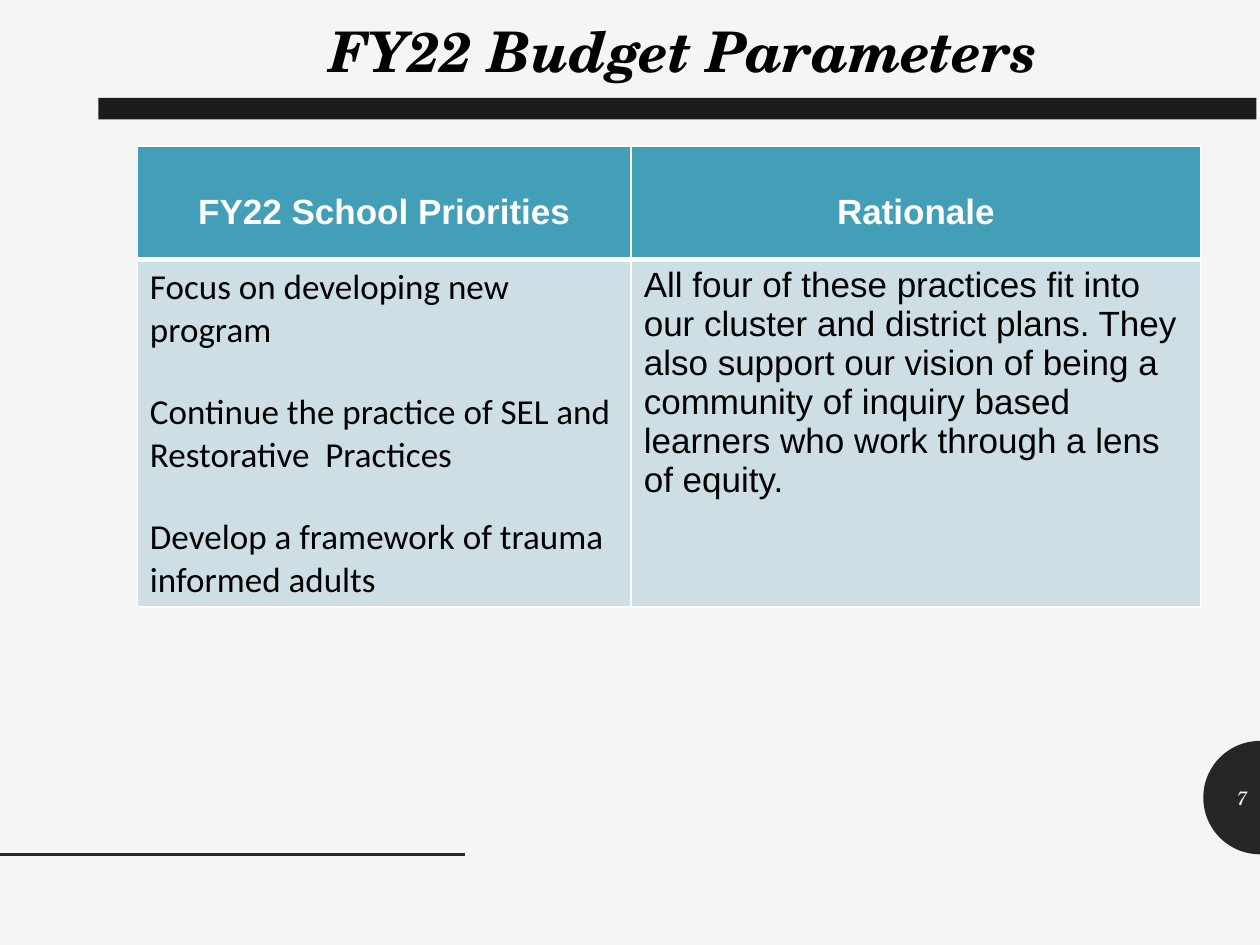
import math

from lxml import etree
from pptx import Presentation
from pptx.dml.color import RGBColor
from pptx.enum.shapes import MSO_CONNECTOR, MSO_SHAPE
from pptx.enum.text import MSO_ANCHOR, PP_ALIGN
from pptx.oxml.ns import qn
from pptx.util import Pt

CENTER, LEFT, RIGHT = PP_ALIGN.CENTER, PP_ALIGN.LEFT, PP_ALIGN.RIGHT
MIDDLE = MSO_ANCHOR.MIDDLE
RECTANGLE = MSO_SHAPE.RECTANGLE
STRAIGHT = MSO_CONNECTOR.STRAIGHT

PAPER = RGBColor(0xF5, 0xF5, 0xF5)
CHARCOAL = RGBColor(0x26, 0x26, 0x26)
BAR = RGBColor(0x1D, 0x1A, 0x1D)
BLACK = RGBColor(0, 0, 0)
WHITE = RGBColor(0xFF, 0xFF, 0xFF)
TEAL = RGBColor(0x43, 0x9E, 0xB7)
PALE_TEAL = RGBColor(0xCD, 0xDE, 0xE5)

SERIF = "TeX Gyre Schola"
TITLE_FORMAT = {"name": SERIF, "size": Pt(32), "bold": True, "italic": True}
NUMBER_FORMAT = {"name": SERIF, "size": Pt(11), "italic": True}
HEADER_FORMAT = {"name": "Arial", "size": Pt(20), "bold": True}
PRIORITY_FORMAT = {"name": "Calibri", "size": Pt(20), "bold": False}
RATIONALE_FORMAT = {"name": "Arial", "size": Pt(20), "bold": False}

HEADERS = ["FY22 School Priorities", "Rationale"]
PRIORITIES = [
    "Focus on developing new program",
    "Continue the practice of SEL and Restorative  Practices",
    "Develop a framework of trauma informed adults",
]
RATIONALE = [
    "All four of these practices fit into our cluster and district plans. "
    "They also support our vision of being a community of inquiry based "
    "learners who work through a lens of equity."
]


def write(frame, paragraphs, formats, color, align, gap=0):
    frame.word_wrap = True
    for index, text in enumerate(paragraphs):
        paragraph = frame.paragraphs[0] if index == 0 else frame.add_paragraph()
        paragraph.text = text
        paragraph.alignment = align
        if index:
            paragraph.space_before = Pt(gap)
        for key, value in formats.items():
            setattr(paragraph.font, key, value)
        paragraph.font.color.rgb = color


def paint(shape, color):
    shape.shadow.inherit = False
    shape.fill.solid()
    shape.fill.fore_color.rgb = color
    shape.line.fill.background()


def add_heading(slide, left, top, width, height):
    """Place the title, with the thick bar below it."""
    title = slide.shapes.title
    title.left, title.top = Pt(left), Pt(top)
    title.width, title.height = Pt(width), Pt(height)
    title.text_frame.vertical_anchor = MIDDLE
    write(title.text_frame, ["FY22 Budget Parameters"], TITLE_FORMAT, BLACK, CENTER)
    bar = slide.shapes.add_shape(
        RECTANGLE, Pt(left - 13), Pt(top + height + 4.2), Pt(661.7), Pt(12.2))
    paint(bar, BAR)


def set_borders(cell, widths):
    """Draw white cell borders; widths maps each side to points."""
    properties = cell._tc.get_or_add_tcPr()
    for index, (side, width) in enumerate(widths.items()):
        border = etree.Element(qn(f"a:ln{side}"), w=str(Pt(width)))
        fill = etree.SubElement(border, qn("a:solidFill"))
        etree.SubElement(fill, qn("a:srgbClr"), val=str(WHITE))
        properties.insert(index, border)


def add_priorities_table(slide, left, top, column_widths, row_heights):
    table = slide.shapes.add_table(
        len(row_heights), len(column_widths), Pt(left), Pt(top),
        Pt(sum(column_widths)), Pt(sum(row_heights))).table
    for column, width in zip(table.columns, column_widths):
        column.width = Pt(width)
    for row, height in zip(table.rows, row_heights):
        row.height = Pt(height)

    for cell, header in zip(table.rows[0].cells, HEADERS):
        cell.margin_top = Pt(26.6)
        write(cell.text_frame, [header], HEADER_FORMAT, WHITE, CENTER)
    body = [(PRIORITIES, PRIORITY_FORMAT), (RATIONALE, RATIONALE_FORMAT)]
    for cell, (paragraphs, formats) in zip(table.rows[1].cells, body):
        write(cell.text_frame, paragraphs, formats, BLACK, LEFT, gap=22.5)

    for row, color, top_line, bottom_line in zip(
            table.rows, [TEAL, PALE_TEAL], [1, 3], [3, 1]):
        for cell in row.cells:
            cell.fill.solid()
            cell.fill.fore_color.rgb = color
            set_borders(cell, {"L": 1, "R": 1, "T": top_line, "B": bottom_line})


def add_page_number(slide, right, middle, radius, number):
    """Place a half disc against the right edge, with the number on it."""
    angles = [math.radians(90 + 3 * step) for step in range(61)]
    points = [(Pt(right + radius * math.cos(angle)), Pt(middle + radius * math.sin(angle)))
              for angle in angles]
    builder = slide.shapes.build_freeform(*points[0])
    builder.add_line_segments(points[1:], close=True)
    paint(builder.convert_to_shape(), CHARCOAL)

    height = 28.8
    label = slide.shapes.add_textbox(
        Pt(right - radius), Pt(middle - height / 2), Pt(radius), Pt(height))
    label.text_frame.vertical_anchor = MIDDLE
    write(label.text_frame, [number], NUMBER_FORMAT, PAPER, RIGHT)


def add_footer_rule(slide, left, top, width):
    rule = slide.shapes.add_connector(
        STRAIGHT, Pt(left), Pt(top), Pt(left + width), Pt(top))
    rule.line.color.rgb = CHARCOAL
    rule.line.width = Pt(2)
    etree.SubElement(rule._element.spPr, qn("a:effectLst"))


def main():
    deck = Presentation()
    deck.slide_width, deck.slide_height = Pt(720), Pt(540)
    slide = deck.slides.add_slide(deck.slide_layouts[5])
    slide.background.fill.solid()
    slide.background.fill.fore_color.rgb = PAPER

    add_page_number(slide, 720, 455.8, 32.4, "7")
    add_footer_rule(slide, 0, 488.2, 265.7)
    add_heading(slide, 69.2, 5.8, 643, 46)
    add_priorities_table(slide, 78.5, 83.5, [282.2, 325.4], [64.8, 198.7])
    deck.save("out.pptx")


if __name__ == "__main__":
    main()
